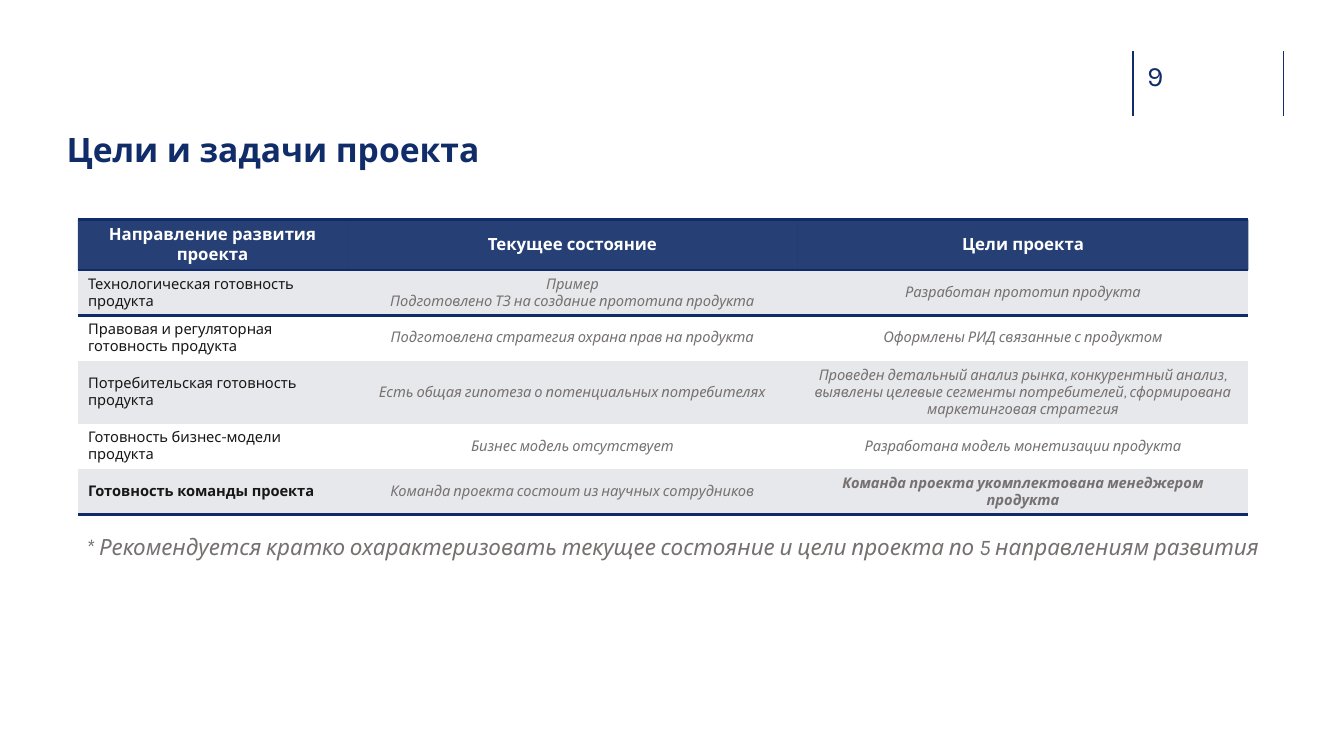
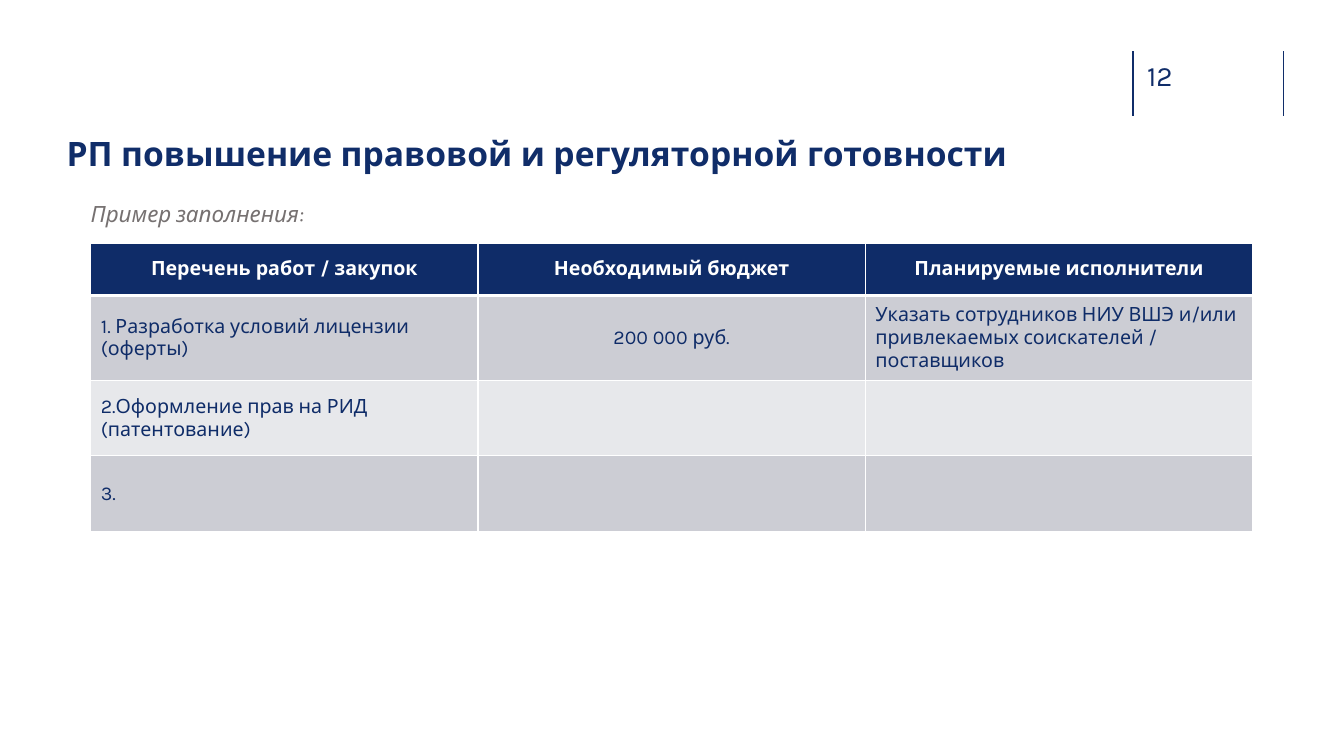
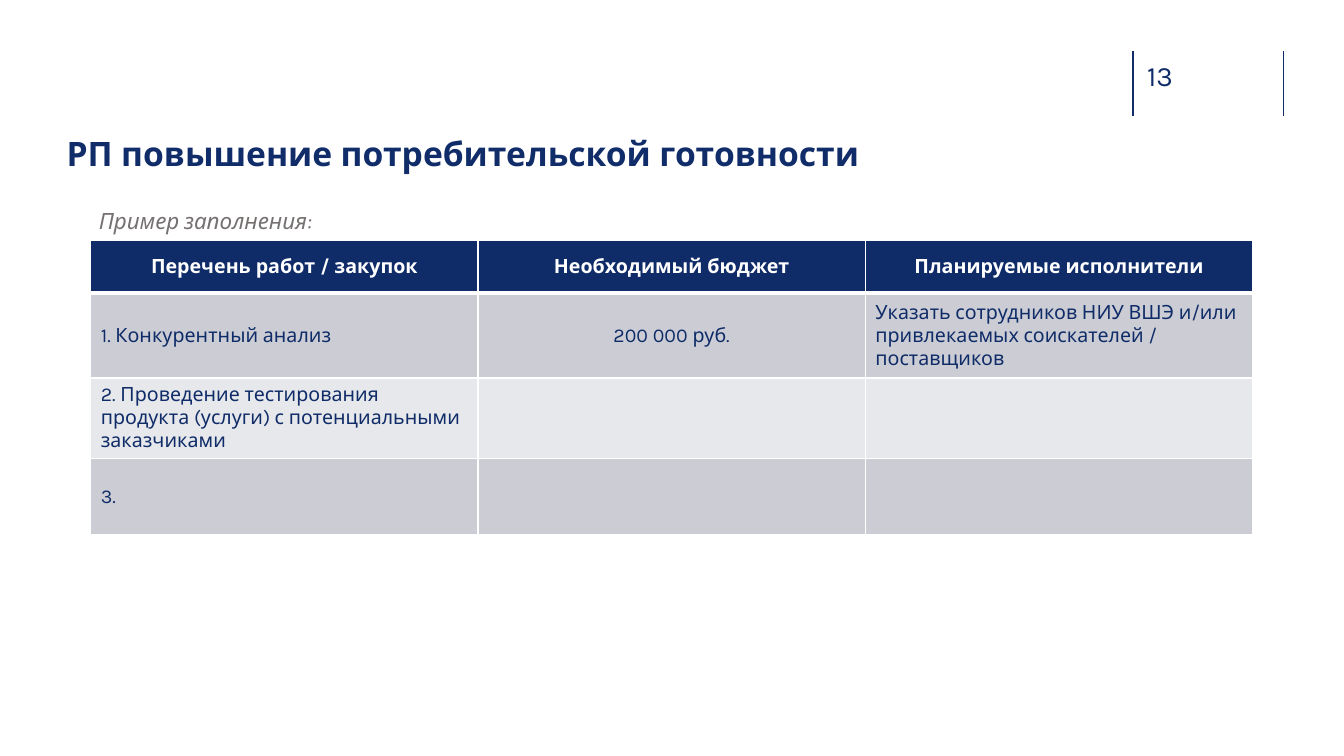
from dataclasses import dataclass

import pptx
import pptx.dml.color
import pptx.enum.shapes
import pptx.enum.text
import pptx.oxml
import pptx.oxml.ns
import pptx.util

ALIGN = pptx.enum.text.PP_ALIGN
ANCHOR = pptx.enum.text.MSO_ANCHOR


@dataclass(frozen=True)
class Theme:
    font: str = "Karla"
    navy: str = "102D69"
    table_navy: str = "0F2C68"
    white: str = "FFFFFF"
    ink: str = "181717"
    hint: str = "767171"
    pale: str = "E7E8EB"
    mid: str = "CCCDD4"
    title_size: float = 24
    number_size: float = 20
    caption_size: float = 16


@dataclass(frozen=True)
class Box:
    """Place on the slide, in percent of its width and height."""
    left: float
    top: float
    width: float
    height: float

    def emu(self):
        return across(self.left), down(self.top), across(self.width), down(self.height)


@dataclass(frozen=True)
class TableLook:
    header_size: float
    body_size: float
    columns: tuple
    rows: tuple
    bands: tuple
    first_color: str
    other_color: str
    centred: tuple
    header_alpha: int = 100
    italic_from: int = 99
    bold_cells: tuple = ()
    grid: bool = False


THEME = Theme()
SLIDE_WIDTH = pptx.util.Inches(13.33)
SLIDE_HEIGHT = pptx.util.Inches(7.5)
NO_TABLE_STYLE = "{2D5ABB26-0587-4C30-8999-92F81FD0307C}"

GOALS_LOOK = TableLook(
    header_size=12, body_size=10.5, columns=(20.03, 33.53, 33.53),
    rows=(6.15,) + (5.35,) * 5, bands=(THEME.pale, THEME.white),
    first_color=THEME.ink, other_color=THEME.hint, centred=(1, 2),
    header_alpha=90, italic_from=1, bold_cells=((5, 0), (5, 2)))
WORKS_LOOK = TableLook(
    header_size=14, body_size=14, columns=(28.82,) * 3,
    rows=(6.95, 11.2, 10, 10), bands=(THEME.mid, THEME.pale),
    first_color=THEME.table_navy, other_color=THEME.table_navy, centred=(1,), grid=True)

GOALS = [
    ["Направление развития проекта", "Текущее состояние", "Цели проекта"],
    ["Технологическая готовность продукта",
     "Пример\nПодготовлено ТЗ на создание прототипа продукта",
     "Разработан прототип продукта"],
    ["Правовая и регуляторная готовность продукта",
     "Подготовлена стратегия охрана прав на продукта",
     "Оформлены РИД связанные с продуктом"],
    ["Потребительская готовность продукта",
     "Есть общая гипотеза о потенциальных потребителях",
     "Проведен детальный анализ рынка, конкурентный анализ, выявлены целевые сегменты "
     "потребителей, сформирована маркетинговая стратегия"],
    ["Готовность бизнес-модели продукта", "Бизнес модель отсутствует",
     "Разработана модель монетизации продукта"],
    ["Готовность команды проекта", "Команда проекта состоит из научных сотрудников",
     "Команда проекта укомплектована менеджером продукта"],
]


def across(percent):
    return round(SLIDE_WIDTH * percent / 100)


def down(percent):
    return round(SLIDE_HEIGHT * percent / 100)


def rgb(color):
    return pptx.dml.color.RGBColor.from_string(color)


def write(frame, text, size, color, bold=False, italic=False, align=ALIGN.LEFT):
    """Fill a text frame, one paragraph for each line of text."""
    for index, line in enumerate(text.split("\n")):
        paragraph = frame.add_paragraph() if index else frame.paragraphs[0]
        paragraph.alignment = align
        run = paragraph.add_run()
        run.text = line
        run.font.name = THEME.font
        run.font.size = pptx.util.Pt(size)
        run.font.bold = bold
        run.font.italic = italic
        run.font.color.rgb = rgb(color)


def set_margins(frame, margin):
    frame.margin_left = frame.margin_right = margin
    frame.margin_top = frame.margin_bottom = margin


def add_text(slide, box, text, size, color, margin=0, anchor=ANCHOR.TOP, italic=False):
    frame = slide.shapes.add_textbox(*box.emu()).text_frame
    frame.word_wrap = True
    frame.vertical_anchor = anchor
    set_margins(frame, pptx.util.Inches(margin))
    write(frame, text, size, color, italic=italic)


def add_page_number(slide, number, box):
    """Number between two upright rules at the sides of the box."""
    for x in (box.left, box.left + box.width):
        rule = slide.shapes.add_connector(
            pptx.enum.shapes.MSO_CONNECTOR.STRAIGHT,
            across(x), down(box.top), across(x), down(box.top + box.height))
        rule.line.color.rgb = rgb(THEME.navy)
        rule.line.width = pptx.util.Pt(1)
        pptx.oxml.ns.qn("a:effectLst")
        rule._element.spPr.append(pptx.oxml.parse_xml(
            f"<a:effectLst {pptx.oxml.ns.nsdecls('a')}/>"))
    number_box = Box(box.left + 1.05, box.top + 0.95, 5.5, 4.5)
    add_text(slide, number_box, str(number), THEME.number_size, THEME.navy)


def add_title(slide, text, box):
    title = slide.shapes.title
    title.left, title.top, title.width, title.height = box.emu()
    frame = title.text_frame
    frame.word_wrap = True
    frame.auto_size = pptx.enum.text.MSO_AUTO_SIZE.NONE
    frame.vertical_anchor = ANCHOR.TOP
    write(frame, text, THEME.title_size, THEME.navy, bold=True)


def add_caption(slide, text, box):
    add_text(slide, box, text, THEME.caption_size, THEME.hint,
             margin=0.08, anchor=ANCHOR.MIDDLE, italic=True)


def set_border(cell, side, color, points):
    cell._tc.get_or_add_tcPr().append(pptx.oxml.parse_xml(
        f'<a:ln{side} {pptx.oxml.ns.nsdecls("a")} w="{pptx.util.Pt(points)}">'
        f'<a:solidFill><a:srgbClr val="{color}"/></a:solidFill></a:ln{side}>'))


def border_cell(cell, row, last_row, look):
    """White grid, or navy rules above and below the header and at the end."""
    if look.grid:
        widths = {"L": 1, "R": 1, "T": 3 if row == 1 else 1, "B": 1 if row else 3}
        color = THEME.white
    else:
        widths = {"T": 2} if row <= 1 else {}
        if row in (0, last_row):
            widths["B"] = 2
        color = THEME.table_navy
    for side, points in widths.items():
        set_border(cell, side, color, points)


def fill_cell(cell, color, alpha=100):
    cell.fill.solid()
    cell.fill.fore_color.rgb = rgb(color)
    if alpha < 100:
        shade = cell._tc.tcPr.find(
            pptx.oxml.ns.qn("a:solidFill")).find(pptx.oxml.ns.qn("a:srgbClr"))
        shade.append(pptx.oxml.parse_xml(
            f'<a:alpha {pptx.oxml.ns.nsdecls("a")} val="{alpha * 1000}"/>'))


def add_grid_table(slide, content, left, top, look):
    box = Box(left, top, sum(look.columns), sum(look.rows))
    table = slide.shapes.add_table(len(look.rows), len(look.columns), *box.emu()).table
    table._tbl.tblPr[0].text = NO_TABLE_STYLE
    for column, width in zip(table.columns, look.columns):
        column.width = across(width)
    for row, height in zip(table.rows, look.rows):
        row.height = down(height)
    for r, texts in enumerate(content):
        for c, text in enumerate(texts):
            cell = table.cell(r, c)
            cell.vertical_anchor = ANCHOR.MIDDLE
            border_cell(cell, r, len(content) - 1, look)
            if r == 0:
                fill_cell(cell, THEME.table_navy, look.header_alpha)
                write(cell.text_frame, text, look.header_size, THEME.white,
                      bold=True, align=ALIGN.CENTER)
                continue
            fill_cell(cell, look.bands[(r - 1) % 2])
            if text:
                write(cell.text_frame, text, look.body_size,
                      look.other_color if c else look.first_color,
                      bold=(r, c) in look.bold_cells, italic=c >= look.italic_from,
                      align=ALIGN.CENTER if c in look.centred else ALIGN.LEFT)


def start_slide(deck, number, title, title_top):
    slide = deck.slides.add_slide(deck.slide_layouts[5])
    add_page_number(slide, number, Box(84.3, 6.8, 11.2, 8.55))
    add_title(slide, title, Box(4.2, title_top, 83.1, 6.7))
    return slide


def add_goals_slide(deck):
    slide = start_slide(deck, 9, "Цели и задачи проекта", 16.4)
    add_grid_table(slide, GOALS, 5.8, 29.05, GOALS_LOOK)
    add_caption(slide, "* Рекомендуется кратко охарактеризовать текущее состояние "
                "и цели проекта по 5 направлениям развития", Box(5.8, 69.45, 89.7, 5.75))


def add_works_slide(deck, number, title, works, table_top, caption_left, caption_top):
    """Slide with a table of works, their budget and who does them."""
    slide = start_slide(deck, number, title, 16.95)
    content = [
        ["Перечень работ / закупок", "Необходимый бюджет", "Планируемые исполнители"],
        [works[0], "200 000 руб.",
         "Указать сотрудников НИУ ВШЭ и/или привлекаемых соискателей / поставщиков"],
        [works[1], "", ""],
        ["3.", "", ""],
    ]
    add_grid_table(slide, content, 6.75, table_top, WORKS_LOOK)
    add_caption(slide, "Пример заполнения:", Box(caption_left, caption_top, 86.35, 5.75))


def main():
    deck = pptx.Presentation()
    deck.slide_width, deck.slide_height = SLIDE_WIDTH, SLIDE_HEIGHT
    add_goals_slide(deck)
    add_works_slide(
        deck, 12, "РП повышение правовой и регуляторной готовности",
        ["1. Разработка условий лицензии (оферты)",
         "2.Оформление прав на РИД (патентование)"], 32.15, 6.15, 25.35)
    add_works_slide(
        deck, 13, "РП повышение потребительской готовности",
        ["1. Конкурентный анализ",
         "2. Проведение тестирования продукта (услуги) с потенциальными заказчиками"],
        31.85, 6.75, 26.25)
    deck.save("out.pptx")


if __name__ == "__main__":
    main()
